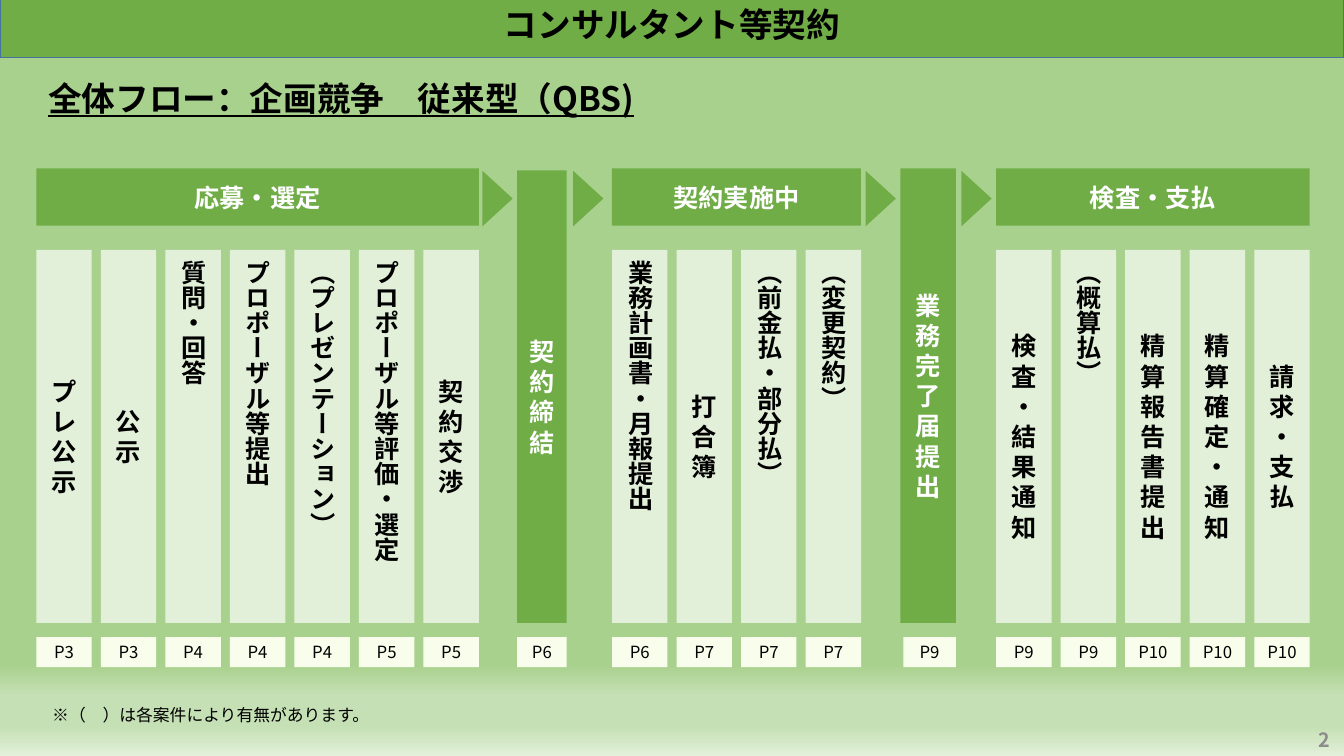
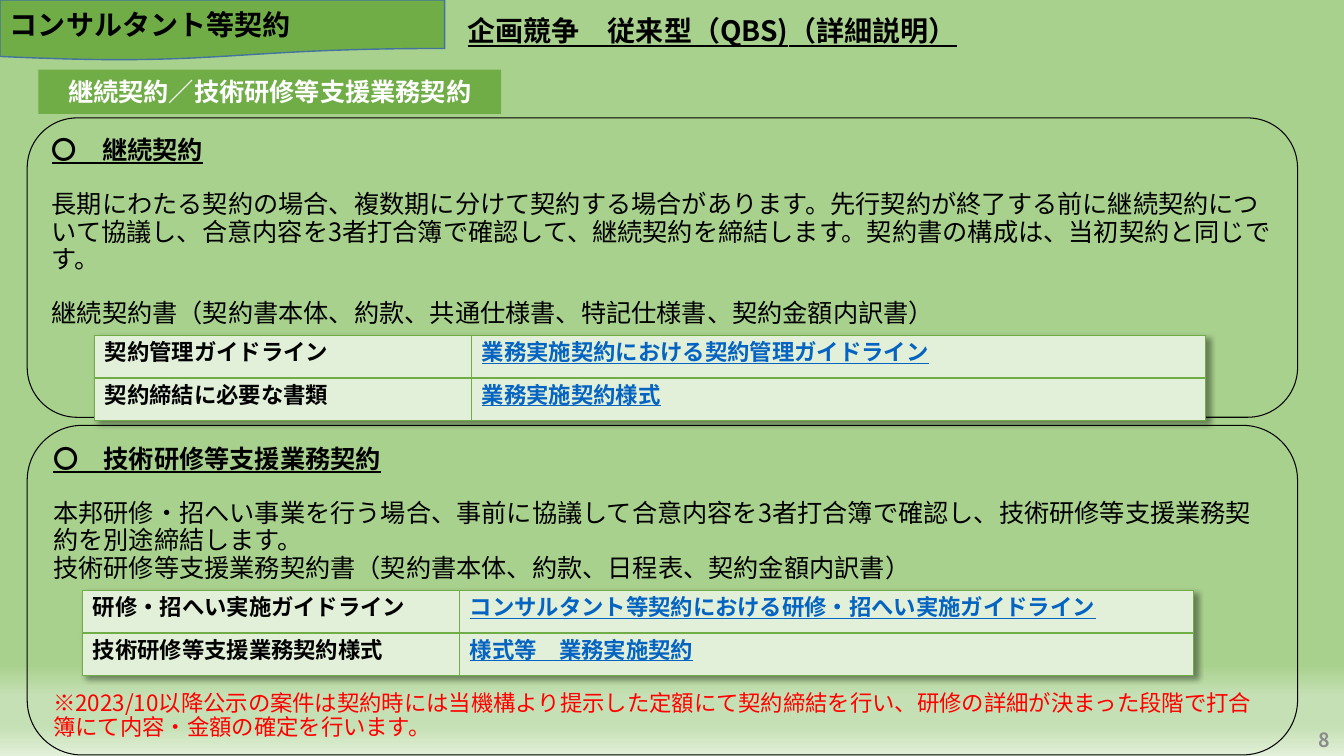
import pptx
import pptx.dml.color
import pptx.enum.shapes
import pptx.enum.text
import pptx.oxml
import pptx.oxml.ns
import pptx.util
from lxml import etree

Inches = pptx.util.Inches
Pt = pptx.util.Pt
RGB = pptx.dml.color.RGBColor.from_string
SHAPE = pptx.enum.shapes.MSO_SHAPE
ALIGN = pptx.enum.text.PP_ALIGN
ANCHOR = pptx.enum.text.MSO_ANCHOR
qn = pptx.oxml.ns.qn
NAMESPACE = pptx.oxml.ns.nsdecls("a")

FONT = "Noto Sans CJK JP"
COLORS = {
    "band": "70AD47",
    "band_line": "43739E",
    "pale": "E2F0D9",
    "page_label": "F9FEEC",
    "black": "000000",
    "white": "FFFFFF",
    "gray": "8C8C8C",
    "link": "0563C1",
    "red": "FF0000",
}
BACKGROUND_STOPS = [(88, "A9D18E"), (92, "C5E0B4"), (96, "C5E0B4"), (100, "E2F0D9")]


def style(para, size, color="black", bold=False, underline=False, font=FONT):
    """Set the paragraph's font, for Latin and East Asian text alike."""
    para.font.name = font
    para.font.size = Pt(size)
    para.font.bold = bold
    para.font.underline = underline
    para.font.color.rgb = RGB(COLORS[color])
    defaults = para._p.get_or_add_pPr().get_or_add_defRPr()
    etree.SubElement(defaults, qn("a:ea"), typeface=font)


def add_box(page, kind, at, text="", size=18, color="black", bold=True, underline=False,
            fill=None, line=None, width=1, align=ALIGN.CENTER, spacing=None):
    """Add a preset shape, or a text box when kind is None."""
    place = [Inches(length) for length in at]
    if kind is None:
        box = page.shapes.add_textbox(*place)
    else:
        box = page.shapes.add_shape(kind, *place)
        box.shadow.inherit = False
        if fill:
            box.fill.solid()
            box.fill.fore_color.rgb = RGB(COLORS[fill])
        else:
            box.fill.background()
        if line:
            box.line.color.rgb = RGB(COLORS[line])
            box.line.width = Pt(width)
        else:
            box.line.fill.background()
    box.text_frame.word_wrap = True
    box.text_frame.vertical_anchor = ANCHOR.MIDDLE
    if text:
        para = box.text_frame.paragraphs[0]
        para.text = text
        para.alignment = align
        para.line_spacing = spacing
        style(para, size, color, bold, underline)
    return box


deck = pptx.Presentation()
deck.slide_width = Inches(13.33)
deck.slide_height = Inches(7.5)

# Shared background
background = deck.slide_master.background.fill
background.gradient()
background.gradient_angle = 270
stops = deck.slide_master.element.find(".//" + qn("a:gsLst"))
for stop in list(stops):
    stops.remove(stop)
for percent, color in BACKGROUND_STOPS:
    stop = etree.SubElement(stops, qn("a:gs"), pos=str(percent * 1000))
    etree.SubElement(stop, qn("a:srgbClr"), val=color)

blank = deck.slide_layouts[6]
flow_page = deck.slides.add_slide(blank)
detail_page = deck.slides.add_slide(blank)

# Shared title band and page number
for page, kind, at, size, align, number in [
    (flow_page, SHAPE.FLOWCHART_PROCESS, (0, -0.1, 13.33, 0.67), 24, ALIGN.CENTER, "2"),
    (detail_page, SHAPE.FLOWCHART_DOCUMENT, (0, 0, 4.41, 0.6), 20, ALIGN.LEFT, "8"),
]:
    add_box(page, kind, at, "コンサルタント等契約", size, fill="band", line="band_line", align=align)
    add_box(page, None, (10.29, 7.14, 3, 0.4), number, 14, "gray", align=ALIGN.RIGHT)

# Overall flow
add_box(flow_page, None, (0.38, 0.67, 12, 0.65), "全体フロー：企画競争　従来型（QBS)", 24,
        underline=True, align=ALIGN.LEFT, spacing=0.9)
add_box(flow_page, None, (0.42, 6.94, 4.14, 0.3), "※（　）は各案件により有無があります。", 12,
        bold=False, align=ALIGN.LEFT)

STEP_WIDTH, STEP_PITCH = 0.55, 0.64
STEP_TOP, STEP_BOTTOM = 2.48, 6.18
LABEL_TOP, LABEL_HEIGHT = 6.32, 0.3

# Each step: text, page label, whether the text is set vertically
PHASES = [
    (0.36, "応募・選定", [
        ("プレ公示", "P3", False),
        ("公示", "P3", False),
        ("質問・回答", "P4", True),
        ("プロポーザル等提出", "P4", True),
        ("（プレゼンテーション）", "P4", True),
        ("プロポーザル等評価・選定", "P5", True),
        ("契約交渉", "P5", False),
    ]),
    (6.07, "契約実施中", [
        ("業務計画書・月報提出", "P6", True),
        ("打合簿", "P7", False),
        ("（前金払・部分払）", "P7", True),
        ("（変更契約）", "P7", True),
    ]),
    (9.88, "検査・支払", [
        ("検査・結果通知", "P9", False),
        ("（概算払）", "P9", True),
        ("精算報告書提出", "P10", False),
        ("精算確定・通知", "P10", False),
        ("請求・支払", "P10", False),
    ]),
]
for phase_left, phase, steps in PHASES:
    phase_width = STEP_PITCH * (len(steps) - 1) + STEP_WIDTH
    add_box(flow_page, SHAPE.RECTANGLE, (phase_left, 1.67, phase_width, 0.57), phase,
            color="white", fill="band")
    for index, (step, label, vertical) in enumerate(steps):
        left = phase_left + index * STEP_PITCH
        box = add_box(flow_page, SHAPE.RECTANGLE,
                      (left, STEP_TOP, STEP_WIDTH, STEP_BOTTOM - STEP_TOP), step, fill="pale")
        if vertical:
            box.element.txBody.bodyPr.set("vert", "eaVert")
        add_box(flow_page, SHAPE.RECTANGLE, (left, LABEL_TOP, STEP_WIDTH, LABEL_HEIGHT), label,
                12, bold=False, fill="page_label")

for left, top, width, milestone, label, label_left in [
    (5.13, 1.69, 0.49, "契約締結", "P6", 5.13),
    (8.93, 1.67, 0.55, "業務完了届提出", "P9", 8.96),
]:
    add_box(flow_page, SHAPE.RECTANGLE, (left, top, width, STEP_BOTTOM - top), milestone,
            color="white", fill="band")
    add_box(flow_page, SHAPE.RECTANGLE,
            (label_left, LABEL_TOP, left + width - label_left, LABEL_HEIGHT), label,
            12, bold=False, fill="page_label")

for left in (4.66, 5.56, 8.46, 9.41):
    arrow = add_box(flow_page, SHAPE.ISOSCELES_TRIANGLE, (left, 1.82, 0.55, 0.3), fill="band")
    arrow.rotation = 90

# Detailed explanation
add_box(detail_page, None, (4.54, 0, 5.11, 0.65), "企画競争　従来型（QBS)（詳細説明）", 20,
        underline=True, align=ALIGN.LEFT, spacing=0.9)
add_box(detail_page, SHAPE.RECTANGLE, (0.38, 0.69, 4.59, 0.44),
        "継続契約／技術研修等支援業務契約", color="white", fill="band")

# Each paragraph: text, size, colour, heading or not, space after in points
PANELS = [
    ((0.27, 1.17, 12.6, 2.97), [
        ("〇　継続契約", 18, "black", True, 19.5),
        ("長期にわたる契約の場合、複数期に分けて契約する場合があります。先行契約が終了する前に"
         "継続契約について協議し、合意内容を3者打合簿で確認して、継続契約を締結します。"
         "契約書の構成は、当初契約と同じです。", 18, "black", False, 19.5),
        ("継続契約書（契約書本体、約款、共通仕様書、特記仕様書、契約金額内訳書）",
         18, "black", False, 0),
    ]),
    ((0.27, 4.22, 12.6, 3.27), [
        ("〇　技術研修等支援業務契約", 18, "black", True, 19.5),
        ("本邦研修・招へい事業を行う場合、事前に協議して合意内容を3者打合簿で確認し、"
         "技術研修等支援業務契約を別途締結します。", 18, "black", False, 0),
        ("技術研修等支援業務契約書（契約書本体、約款、日程表、契約金額内訳書）",
         18, "black", False, 78),
        ("※2023/10以降公示の案件は契約時には当機構より提示した定額にて契約締結を行い、"
         "研修の詳細が決まった段階で打合簿にて内容・金額の確定を行います。",
         16, "red", False, 0),
    ]),
]
for at, paragraphs in PANELS:
    panel = add_box(detail_page, SHAPE.ROUNDED_RECTANGLE, at, line="black", width=0.75)
    frame = panel.text_frame
    frame.vertical_anchor = ANCHOR.TOP
    for index, (text, size, color, heading, gap) in enumerate(paragraphs):
        para = frame.add_paragraph() if index else frame.paragraphs[0]
        para.text = text
        para.alignment = ALIGN.LEFT
        para.line_spacing = 0.9
        para.space_after = Pt(gap)
        style(para, size, color, bold=heading, underline=heading)

TABLE_COLUMNS = (3.74, 7.28)
ROW_HEIGHT = 0.42
TABLES = [
    (0.94, 3.33, [
        ("契約管理ガイドライン", "業務実施契約における契約管理ガイドライン"),
        ("契約締結に必要な書類", "業務実施契約様式"),
    ]),
    (0.82, 5.86, [
        ("研修・招へい実施ガイドライン", "コンサルタント等契約における研修・招へい実施ガイドライン"),
        ("技術研修等支援業務契約様式", "様式等　業務実施契約"),
    ]),
]
TABLE_SHADOW = (
    f'<a:effectLst {NAMESPACE}><a:outerShdw blurRad="50800" dist="38100" dir="2700000" algn="tl">'
    '<a:srgbClr val="000000"><a:alpha val="40000"/></a:srgbClr></a:outerShdw></a:effectLst>'
)
for left, top, rows in TABLES:
    table = detail_page.shapes.add_table(
        len(rows), len(TABLE_COLUMNS), Inches(left), Inches(top),
        Inches(sum(TABLE_COLUMNS)), Inches(ROW_HEIGHT * len(rows))).table
    table.first_row = False
    table.horz_banding = False
    table._tbl.tblPr.insert(0, pptx.oxml.parse_xml(TABLE_SHADOW))
    for column, width in zip(table.columns, TABLE_COLUMNS):
        column.width = Inches(width)
    for row_index, texts in enumerate(rows):
        for column_index, text in enumerate(texts):
            cell = table.cell(row_index, column_index)
            cell.text = text
            linked = column_index == 1
            style(cell.text_frame.paragraphs[0], 16, "link" if linked else "black",
                  bold=True, underline=linked, font="Arial")
            properties = cell._tc.get_or_add_tcPr()
            for side in ("lnL", "lnR", "lnT", "lnB"):
                properties.append(pptx.oxml.parse_xml(
                    f'<a:{side} {NAMESPACE} w="12700"><a:solidFill>'
                    f'<a:srgbClr val="{COLORS["band"]}"/></a:solidFill></a:{side}>'))
            cell.fill.solid()
            cell.fill.fore_color.rgb = RGB(COLORS["pale"])

deck.save("out.pptx")
